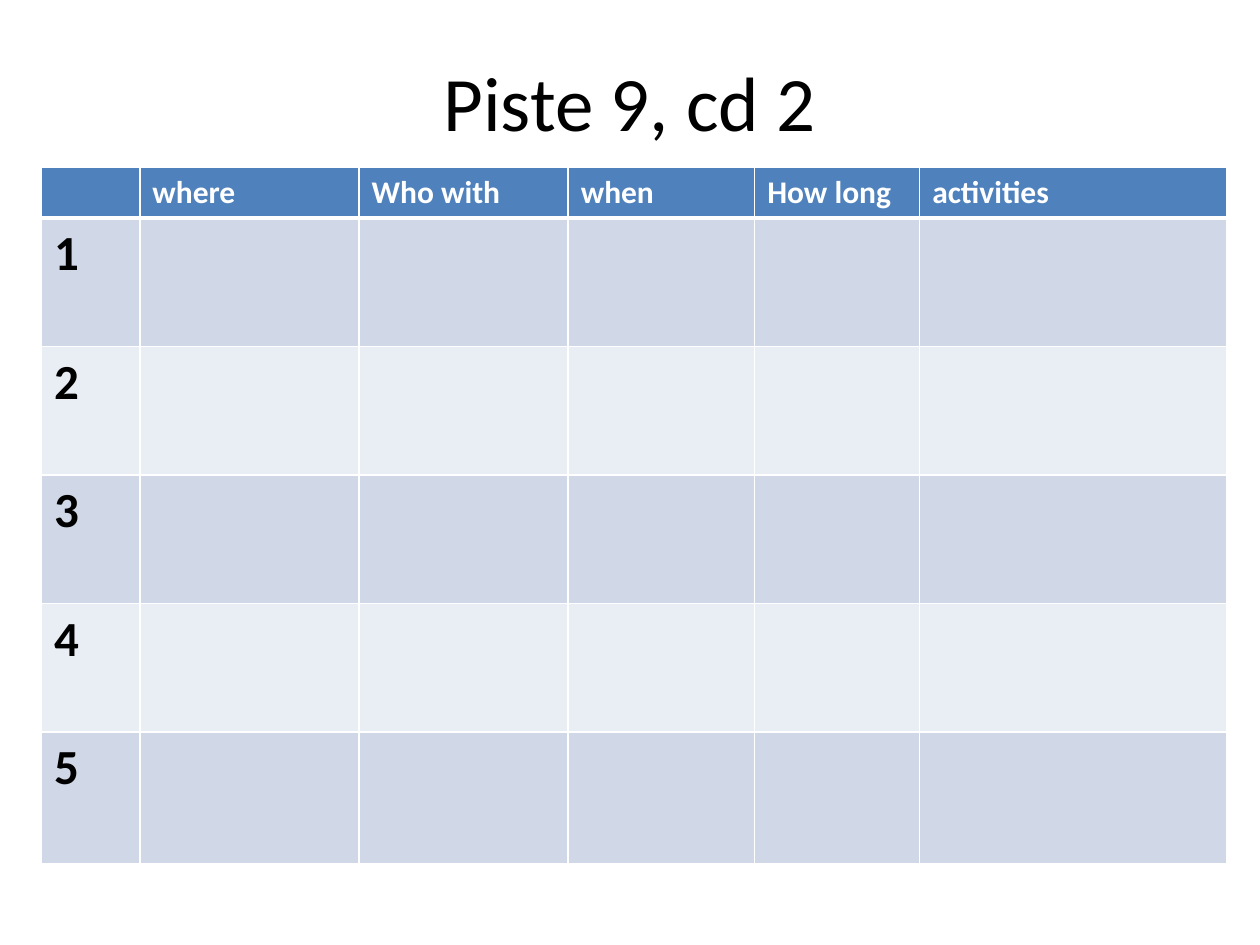
from dataclasses import dataclass

from lxml.etree import SubElement
from pptx import Presentation
from pptx.dml.color import RGBColor
from pptx.enum.text import MSO_ANCHOR, PP_ALIGN
from pptx.oxml.ns import qn
from pptx.slide import Slide
from pptx.table import _Cell
from pptx.text.text import _Paragraph
from pptx.util import Inches, Pt


@dataclass(frozen=True)
class Theme:
    font: str = "Calibri"
    ink: str = "000000"
    white: str = "FFFFFF"
    head: str = "4F81BD"
    bands: tuple[str, str] = ("D0D8E8", "E9EDF4")
    title: int = 44
    label: int = 18
    number: int = 28
    thin: int = 1
    thick: int = 3


@dataclass(frozen=True)
class Column:
    name: str
    width: float


@dataclass(frozen=True)
class Style:
    fill: str
    color: str
    size: int
    top: int
    bottom: int


THEME = Theme()
COLUMNS = (
    Column("", 0.78),
    Column("where", 1.74),
    Column("Who with", 1.66),
    Column("when", 1.48),
    Column("How long", 1.31),
    Column("activities", 2.44),
)
HEIGHTS = (0.4, 1.02, 1.02, 1.02, 1.02, 1.05)


def write(para: _Paragraph, text: str, size: int, color: str, bold: bool) -> None:
    run = para.add_run()
    run.text = text
    run.font.name = THEME.font
    run.font.size = Pt(size)
    run.font.bold = bold
    run.font.color.rgb = RGBColor.from_string(color)


def border(cell: _Cell, side: str, width: int) -> None:
    line = SubElement(cell._tc.get_or_add_tcPr(), qn(f"a:ln{side}"), w=str(Pt(width)))
    fill = SubElement(line, qn("a:solidFill"))
    SubElement(fill, qn("a:srgbClr"), val=THEME.white)


def paint(cell: _Cell, text: str, style: Style) -> None:
    widths = {"L": THEME.thin, "R": THEME.thin, "T": style.top, "B": style.bottom}
    for side, width in widths.items():
        border(cell, side, width)
    cell.fill.solid()
    cell.fill.fore_color.rgb = RGBColor.from_string(style.fill)
    if text:
        write(cell.text_frame.paragraphs[0], text, style.size, style.color, True)


def row_style(row: int) -> Style:
    if row == 0:
        return Style(THEME.head, THEME.white, THEME.label, THEME.thin, THEME.thick)
    top = THEME.thick if row == 1 else THEME.thin
    return Style(THEME.bands[(row - 1) % 2], THEME.ink, THEME.number, top, THEME.thin)


def add_title(slide: Slide, text: str) -> None:
    box = slide.shapes.add_textbox(Inches(0.5), Inches(0.17), Inches(9), Inches(1.25))
    frame = box.text_frame
    frame.word_wrap = True
    frame.vertical_anchor = MSO_ANCHOR.MIDDLE
    para = frame.paragraphs[0]
    para.alignment = PP_ALIGN.CENTER
    write(para, text, THEME.title, THEME.ink, False)


def add_grid(slide: Slide) -> None:
    width = sum(col.width for col in COLUMNS)
    table = slide.shapes.add_table(
        len(HEIGHTS), len(COLUMNS),
        Inches(0.33), Inches(1.33), Inches(width), Inches(sum(HEIGHTS)),
    ).table
    table.horz_banding = False
    for index, col in enumerate(COLUMNS):
        table.columns[index].width = Inches(col.width)
    for row, height in enumerate(HEIGHTS):
        table.rows[row].height = Inches(height)
        style = row_style(row)
        for index, col in enumerate(COLUMNS):
            number = str(row) if index == 0 else ""
            paint(table.cell(row, index), number if row else col.name, style)


def main() -> None:
    deck = Presentation()
    deck.slide_width, deck.slide_height = Inches(10), Inches(7.5)
    slide = deck.slides.add_slide(deck.slide_layouts[6])
    add_title(slide, "Piste 9, cd 2")
    add_grid(slide)
    deck.save("out.pptx")


if __name__ == "__main__":
    main()
